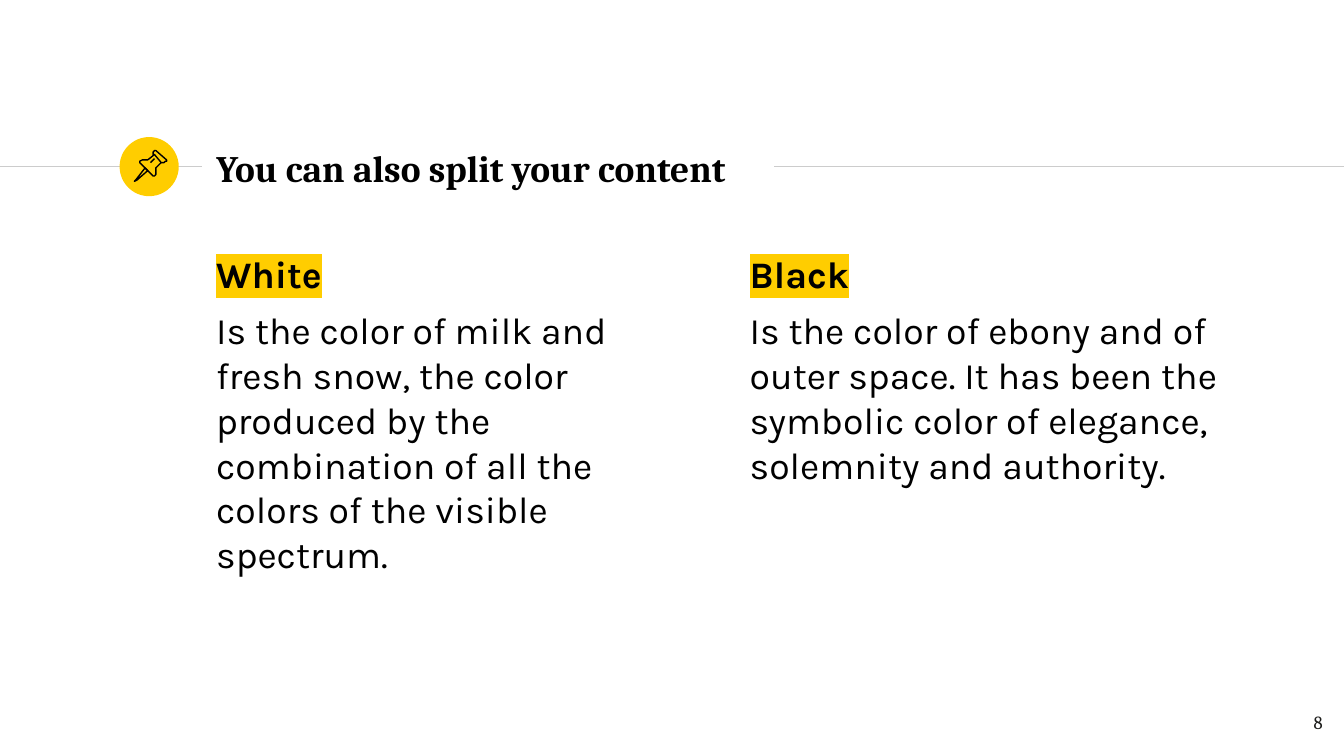
from pptx import Presentation
from pptx.dml.color import RGBColor as RGB
from pptx.enum.shapes import MSO_CONNECTOR as Connector, MSO_SHAPE as Shape
from pptx.enum.text import MSO_ANCHOR as Anchor, MSO_AUTO_SIZE as AutoSize, PP_ALIGN as Align
from pptx.oxml.ns import qn
from pptx.util import Inches, Pt
from lxml.etree import SubElement

TITLE = "You can also split your content"
COLUMNS = [
    ("White", "Is the color of milk and fresh snow, the color produced by the "
              "combination of all the colors of the visible spectrum."),
    ("Black", "Is the color of ebony and of outer space. It has been the "
              "symbolic color of elegance, solemnity and authority."),
]
PAGE_NUMBER = "8"

# Pushpin outlines in hundredths of an inch: (closed, points)
PUSHPIN = [
    (True, [(108, 125), (101, 134), (100, 135), (102, 134), (110, 127)]),  # needle
    (True, [(115, 115), (120, 121), (122, 121), (123, 120), (124, 120),
            (124, 119), (116, 112), (115, 112), (114, 113), (114, 115)]),  # head
    (False, [(115, 115), (110, 119), (109, 119), (106, 119), (104, 120),
             (104, 121), (114, 131), (115, 131), (116, 130), (116, 125),
             (120, 121)]),  # body
    (False, [(112, 121), (115, 118)]),  # glint
]

THEME = {
    "heading_font": "Cambria", "body_font": "Karla",
    "text_size": 20, "number_size": 10, "line_width": 0.75,
    "text": RGB(0, 0, 0), "number": RGB(0x1D, 0x1D, 0x1B),
    "rule": RGB(0xCC, 0xCC, 0xCC), "accent": RGB(0xFF, 0xCD, 0x00),
}
SLIDE_WIDTH = Inches(10)
SLIDE_HEIGHT = SLIDE_WIDTH * 9 // 16
MARGIN = 0.1
RULE_Y = 1.24
RULES = [(0, 1.5), (5.76, 10)]
BADGE_SIZE = 0.44
COLUMN_LEFT, COLUMN_TOP, COLUMN_STEP = 1.51, 1.77, 3.97
COLUMN_WIDTH, COLUMN_HEIGHT = 3.75, 3.53


def prepare_frame(frame, anchor=Anchor.TOP):
    frame.word_wrap = True
    frame.auto_size = AutoSize.NONE
    frame.vertical_anchor = anchor
    frame.margin_left = frame.margin_right = Inches(MARGIN)
    frame.margin_top = frame.margin_bottom = Inches(MARGIN)


def style(paragraph, font, size, color, bold=False, align=Align.LEFT):
    paragraph.alignment = align
    paragraph.font.name = THEME[font]
    paragraph.font.size = Pt(THEME[size])
    paragraph.font.color.rgb = THEME[color]
    paragraph.font.bold = bold


def highlight(run, color):
    mark = SubElement(run.font._element, qn("a:highlight"))
    SubElement(mark, qn("a:srgbClr"), val=str(THEME[color]))


def add_text_box(slide, left, top, width, height):
    frame = slide.shapes.add_textbox(
        Inches(left), Inches(top), Inches(width), Inches(height)).text_frame
    prepare_frame(frame)
    return frame


def add_rules(slide):
    for start, end in RULES:
        rule = slide.shapes.add_connector(
            Connector.STRAIGHT, Inches(start), Inches(RULE_Y), Inches(end), Inches(RULE_Y))
        rule.line.color.rgb = THEME["rule"]
        rule.line.width = Pt(THEME["line_width"])
        SubElement(rule._element.spPr, qn("a:effectLst"))


def add_badge(slide):
    badge = slide.shapes.add_shape(
        Shape.OVAL, Inches(0.89), Inches(RULE_Y - BADGE_SIZE / 2),
        Inches(BADGE_SIZE), Inches(BADGE_SIZE))
    badge.shadow.inherit = False
    badge.fill.solid()
    badge.fill.fore_color.rgb = THEME["accent"]
    badge.line.fill.background()

    for closed, (start, *others) in PUSHPIN:
        builder = slide.shapes.build_freeform(*start, scale=Inches(0.01))
        builder.add_line_segments(others, close=closed)
        outline = builder.convert_to_shape()
        outline.shadow.inherit = False
        outline.fill.background()
        outline.line.color.rgb = THEME["text"]
        outline.line.width = Pt(THEME["line_width"])


def add_title(slide):
    title = slide.shapes.title
    title.left, title.top = Inches(COLUMN_LEFT), Inches(1.01)
    title.width, title.height = Inches(4.24), Inches(0.48)
    prepare_frame(title.text_frame, Anchor.MIDDLE)
    title.text_frame.text = TITLE
    style(title.text_frame.paragraphs[0], "heading_font", "text_size", "text", bold=True)


def add_columns(slide):
    for index, (heading, description) in enumerate(COLUMNS):
        frame = add_text_box(slide, COLUMN_LEFT + index * COLUMN_STEP, COLUMN_TOP,
                             COLUMN_WIDTH, COLUMN_HEIGHT)
        label = frame.paragraphs[0]
        label.text = heading
        style(label, "body_font", "text_size", "text", bold=True)
        highlight(label.runs[0], "accent")
        body = frame.add_paragraph()
        body.text = description
        body.space_before = Pt(6)
        style(body, "body_font", "text_size", "text")


def add_page_number(slide):
    number = add_text_box(slide, 9.34, 5.19, 0.6, 0.43).paragraphs[0]
    number.text = PAGE_NUMBER
    style(number, "heading_font", "number_size", "number", align=Align.RIGHT)


def main():
    deck = Presentation()
    deck.slide_width, deck.slide_height = SLIDE_WIDTH, SLIDE_HEIGHT
    slide = deck.slides.add_slide(deck.slide_layouts[5])
    add_rules(slide)
    add_badge(slide)
    add_title(slide)
    add_columns(slide)
    add_page_number(slide)
    deck.save("out.pptx")


if __name__ == "__main__":
    main()
